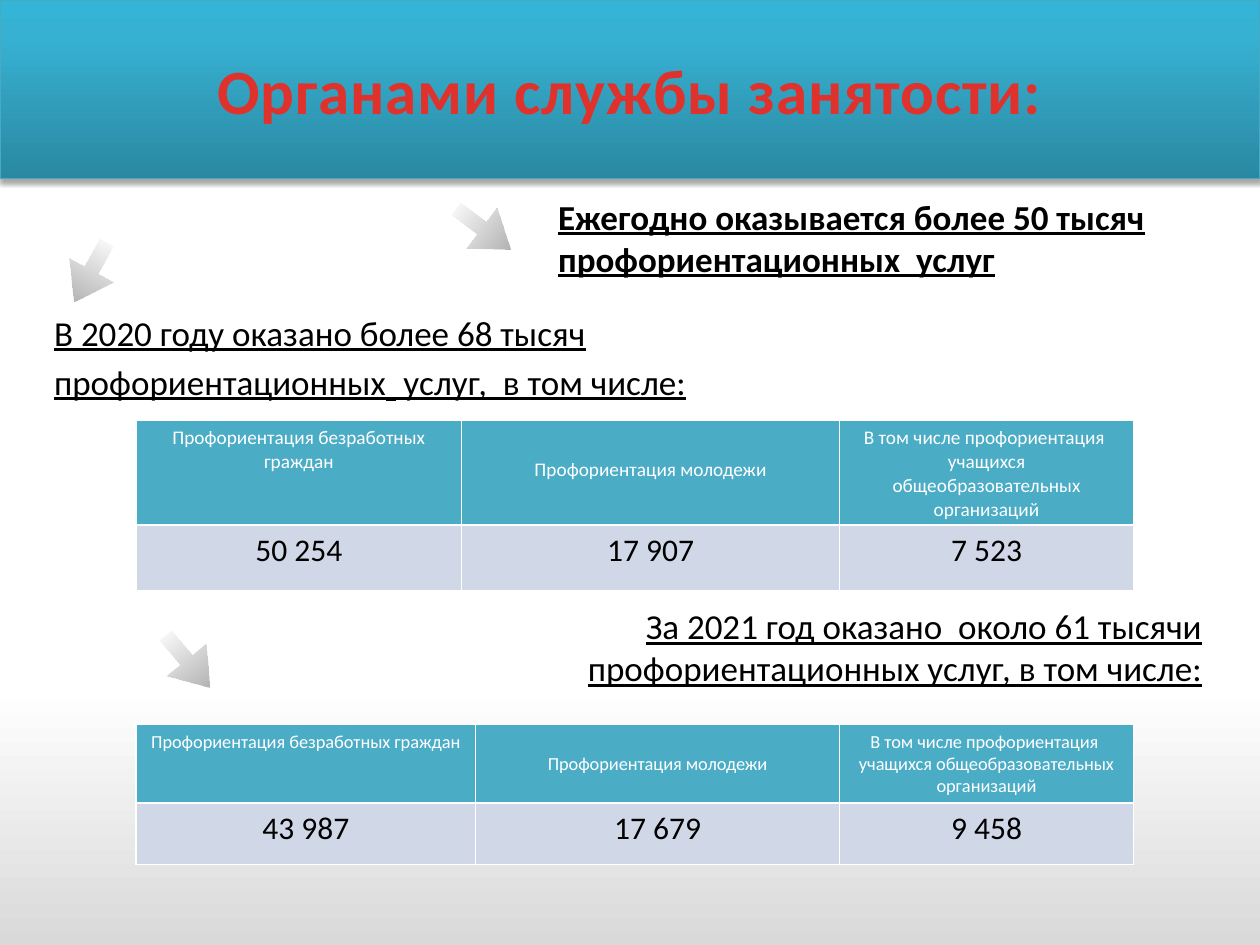
from pptx import Presentation
from pptx.dml import color
from pptx.enum import shapes, text
from pptx.oxml import ns, parse_xml
from pptx.util import Pt

NS = ns.nsdecls("a")
FONT, BLACK, WHITE = "Calibri", "000000", "FFFFFF"
PUPILS = "В том числе профориентация  учащихся общеобразовательных организаций"
HEADINGS = ("Профориентация безработных граждан", "Профориентация молодежи", PUPILS)


def rgb(value):
    """Turn a hex string into a colour."""
    return color.RGBColor.from_string(value)


def set_font(font, shade, **formats):
    """Apply the typeface, a colour and any further font values."""
    font.color.rgb = rgb(shade)
    for key, value in {"name": FONT, **formats}.items():
        setattr(font, key, value)


def add_gradient_shape(slide, kind, box, stops, angle):
    """Add a borderless preset shape with (position, colour, opacity) stops."""
    shape = slide.shapes.add_shape(kind, *map(Pt, box))
    shape.shadow.inherit = False
    shape.line.fill.background()
    shape.fill.gradient()
    marks = "".join(
        f'<a:gs pos="{place * 1000}"><a:srgbClr val="{shade}">'
        f'<a:alpha val="{opacity * 1000}"/></a:srgbClr></a:gs>'
        for place, shade, opacity in stops)
    properties = shape.element.spPr
    properties.replace(properties.find(ns.qn("a:gradFill")), parse_xml(
        f'<a:gradFill {NS} rotWithShape="1"><a:gsLst>{marks}</a:gsLst>'
        f'<a:lin ang="{angle * 60000}" scaled="0"/></a:gradFill>'))
    return shape


def add_backdrop(slide, width, height):
    """Draw the blue heading band and the grey fade at the foot."""
    rectangle = shapes.MSO_SHAPE.RECTANGLE
    band = add_gradient_shape(
        slide, rectangle, (0, 0, width, 102.2),
        [(0, "2A88A2", 100), (80, "37B1D2", 100), (100, "34B4D6", 100)], 270)
    band.line.color.rgb = rgb("46AAC5")
    band.line.width = Pt(0.75)
    band.element.spPr.find(ns.qn("a:effectLst")).append(parse_xml(
        f'<a:outerShdw {NS} blurRad="{Pt(3.1)}" dist="{Pt(1.8)}" dir="5400000" '
        'rotWithShape="0"><a:srgbClr val="000000"><a:alpha val="35000"/>'
        '</a:srgbClr></a:outerShdw>'))
    fade_top = 246.2
    fade = add_gradient_shape(
        slide, rectangle, (0, fade_top, width, height - fade_top),
        [(0, "D9D9D9", 100), (50, WHITE, 100), (100, WHITE, 100)], 270)
    for depth, part in enumerate((band, fade), 2):
        slide.shapes.element.insert(depth, part.element)


def fill_title(slide, box, heading):
    """Place and format the title placeholder."""
    title = slide.shapes.title
    for key, value in zip(("left", "top", "width", "height"), box):
        setattr(title, key, Pt(value))
    title.text_frame.text = heading
    title.text_frame.vertical_anchor = text.MSO_ANCHOR.MIDDLE
    paragraph = title.text_frame.paragraphs[0]
    paragraph.alignment = text.PP_ALIGN.CENTER
    run = paragraph.runs[0]
    set_font(run.font, "E0322D", size=Pt(36), bold=True)
    run.font._element.set("spc", "50")


def add_pointer(slide, left, top, rotation):
    """Add a fading grey arrow turned by the given angle."""
    arrow = add_gradient_shape(
        slide, shapes.MSO_SHAPE.LEFT_ARROW, (left, top, 38.6, 28.8),
        [(0, "B2B2B2", 100), (100, "B2B2B2", 0)], 0)
    arrow.adjustments[0], arrow.adjustments[1] = 0.31, 0.72
    arrow.rotation = rotation


def add_statement(slide, box, lines, align=text.PP_ALIGN.LEFT, bold=False):
    """Add underlined lines, each a list of (wording, size) runs."""
    frame = slide.shapes.add_textbox(*map(Pt, box)).text_frame
    frame.word_wrap = True
    frame.auto_size = text.MSO_AUTO_SIZE.SHAPE_TO_FIT_TEXT
    for index, line in enumerate(lines):
        paragraph = frame.add_paragraph() if index else frame.paragraphs[0]
        paragraph.alignment = align
        for wording, size in line:
            run = paragraph.add_run()
            run.text = wording
            set_font(run.font, BLACK, size=Pt(size), bold=bold, underline=True)


def fill_cell(cell, wording, size, shade, background):
    """Write one centred table cell with white borders."""
    cell.text = wording
    paragraph = cell.text_frame.paragraphs[0]
    paragraph.alignment = text.PP_ALIGN.CENTER
    set_font(paragraph.runs[0].font, shade, size=Pt(size), bold=False)
    properties = cell._tc.get_or_add_tcPr()
    for side in "LRTB":
        properties.append(parse_xml(
            f'<a:ln{side} {NS} w="{Pt(1)}"><a:solidFill><a:srgbClr val="{WHITE}"/>'
            f'</a:solidFill></a:ln{side}>'))
    cell.fill.solid()
    cell.fill.fore_color.rgb = rgb(background)


def add_services_table(slide, left, top, widths, heights, counts, head_size, youth_margin):
    """Add a table of service counts under the shared headings."""
    table = slide.shapes.add_table(
        2, len(widths), Pt(left), Pt(top), Pt(sum(widths)), Pt(sum(heights))).table
    table.horz_banding = False
    for column, width in zip(table.columns, widths):
        column.width = Pt(width)
    for row, height in zip(table.rows, heights):
        row.height = Pt(height)
    for index, (heading, count) in enumerate(zip(HEADINGS, counts)):
        fill_cell(table.cell(0, index), heading, head_size, WHITE, "4BACC6")
        fill_cell(table.cell(1, index), count, 18, BLACK, "D0D8E8")
    table.cell(0, 1).margin_top = Pt(youth_margin)


def main():
    """Build the slide on employment services and save it."""
    deck = Presentation()
    deck.slide_width, deck.slide_height = Pt(720), Pt(540)
    slide = deck.slides.add_slide(deck.slide_layouts[5])
    add_backdrop(slide, 720, 540)
    fill_title(slide, (36, 5.8, 648, 90), "Органами службы занятости:")
    for pointer in ((257, 116.6, 217), (87.8, 363.6, 230.3), (32.4, 141.1, 298.6)):
        add_pointer(slide, *pointer)

    add_statement(slide, (311.8, 108, 389.5, 55.4), [
        [("Ежегодно оказывается более 50 тысяч", 20)],
        [("профориентационных  услуг", 20)]], bold=True)
    add_statement(slide, (23.8, 174.2, 473.8, 60.5), [
        [("В 2020 году оказано более 68 тысяч", 20)],
        [("профориентационных", 20), (" ", 24), (" услуг,  в том числе:", 20)]])
    add_services_table(slide, 77.8, 240, (186, 216, 168), (59.8, 37.4),
                       ("50 254", "17 907", "7 523"), 11, 21.9)
    add_statement(slide, (234, 342, 460.1, 55.4), [
        [("За 2021 год оказано  около 61 тысячи профориентационных услуг, "
          "в том числе:", 20)]], align=text.PP_ALIGN.RIGHT)
    add_services_table(slide, 77.8, 414, (194, 208, 168), (45, 35),
                       ("43 987", "17 679", "9 458"), 10.5, 16.4)
    deck.save("out.pptx")


if __name__ == "__main__":
    main()
